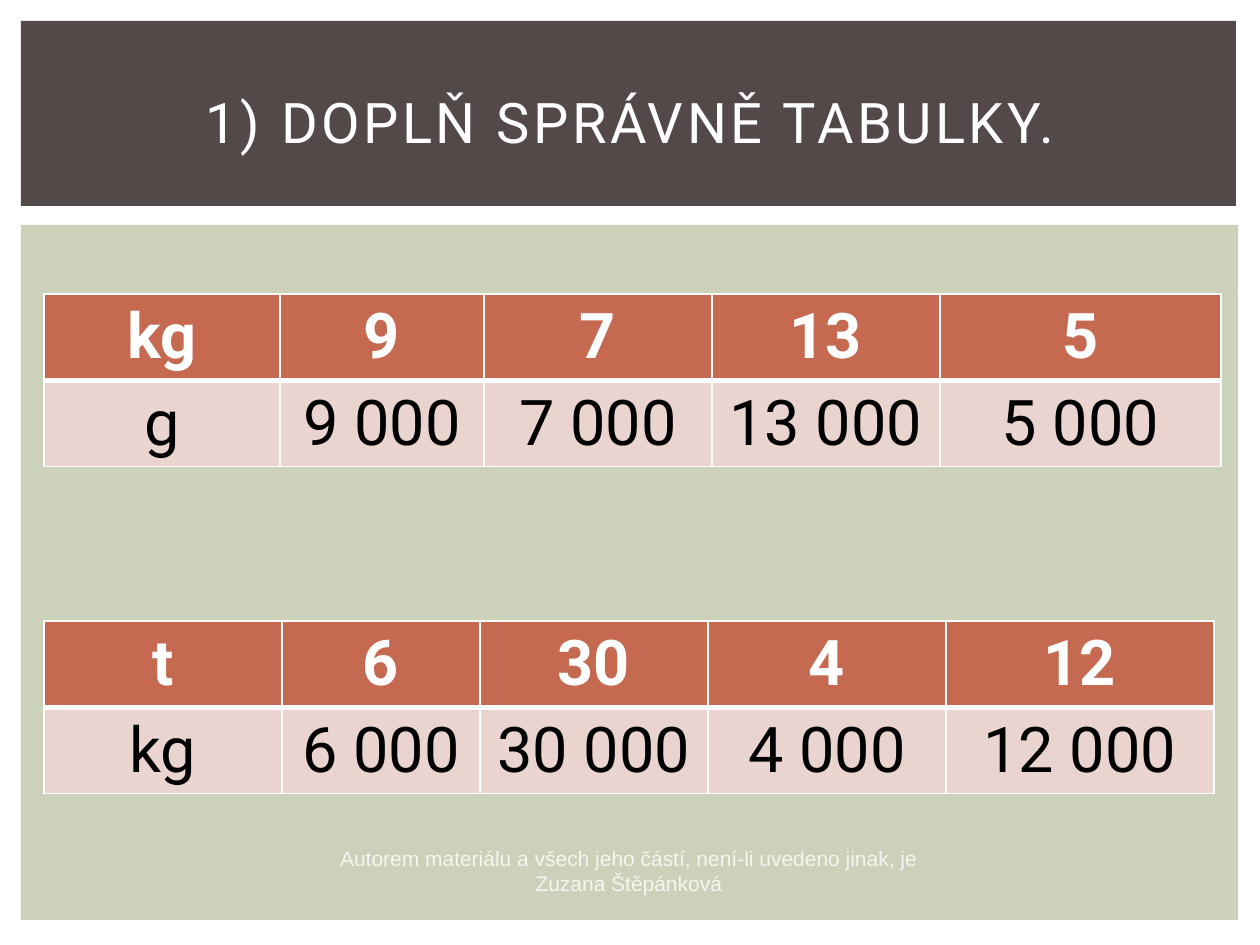
from dataclasses import dataclass

from lxml import etree
from pptx import Presentation
from pptx import util as u
from pptx.dml.color import RGBColor
from pptx.enum import shapes, text
from pptx.oxml.ns import qn

PX = u.Inches(1) // 126


@dataclass(frozen=True)
class Theme:
    font: str = "Roboto"
    footer_font: str = "Arial"
    white: str = "FFFFFF"
    black: str = "000000"
    band: str = "534949"
    panel: str = "CCD1B9"
    header: str = "C66951"
    body: str = "EAD4D0"
    footer: str = "F5F6F1"
    title_size: int = 32
    cell_size: int = 36
    footer_size: int = 12


T = Theme()


def px(*values):
    return [v * PX for v in values]


def write(tf, content, font, size, color, bold=False):
    p = tf.paragraphs[0]
    p.alignment = text.PP_ALIGN.CENTER
    r = p.add_run()
    r.text = content
    fmt = {"name": font, "size": u.Pt(size), "bold": bold}
    for name, value in fmt.items():
        setattr(r.font, name, value)
    r.font.color.rgb = RGBColor.from_string(color)
    return r


def add_panel(s, box, color):
    sp = s.shapes.add_shape(shapes.MSO_SHAPE.RECTANGLE, *px(*box))
    sp.shadow.inherit = False
    sp.fill.solid()
    sp.fill.fore_color.rgb = RGBColor.from_string(color)
    sp.line.fill.background()
    return sp


def set_title(s, content, box):
    sp = s.shapes.title
    for name, value in zip(("left", "top", "width", "height"), px(*box)):
        setattr(sp, name, value)
    tf = sp.text_frame
    fmt = {
        "word_wrap": True,
        "auto_size": text.MSO_AUTO_SIZE.NONE,
        "vertical_anchor": text.MSO_ANCHOR.MIDDLE,
    }
    for name, value in fmt.items():
        setattr(tf, name, value)
    r = write(tf, content, T.font, T.title_size, T.white)
    r.font.element.set("spc", "200") if hasattr(r.font, "element") else r._r.get_or_add_rPr().set("spc", "200")


def set_borders(cell, widths):
    tc_pr = cell._tc.get_or_add_tcPr()
    for side, width in widths.items():
        ln = etree.SubElement(tc_pr, qn(f"a:ln{side}"), w=str(u.Pt(width)))
        fill = etree.SubElement(ln, qn("a:solidFill"))
        etree.SubElement(fill, qn("a:srgbClr"), val=T.white)


def add_units_table(s, left, top, widths, row_height, rows):
    box = px(left, top, sum(widths), row_height * len(rows))
    tbl = s.shapes.add_table(len(rows), len(widths), *box).table
    for col, width in zip(tbl.columns, widths):
        col.width = width * PX
    for i, row in enumerate(rows):
        head = i == 0
        tbl.rows[i].height = row_height * PX
        fill, color = (T.header, T.white) if head else (T.body, T.black)
        borders = {"L": 1, "R": 1, "T": 1 if head else 3, "B": 3 if head else 1}
        for j, value in enumerate(row):
            cell = tbl.cell(i, j)
            set_borders(cell, borders)
            cell.fill.solid()
            cell.fill.fore_color.rgb = RGBColor.from_string(fill)
            write(cell.text_frame, value, T.font, T.cell_size, color, head)


def add_footer(s, content, box):
    tf = s.shapes.add_textbox(*px(*box)).text_frame
    tf.word_wrap = True
    write(tf, content, T.footer_font, T.footer_size, T.footer)


def main():
    prs = Presentation()
    prs.slide_width, prs.slide_height = px(1260, 945)
    s = prs.slides.add_slide(prs.slide_layouts[5])

    panel = add_panel(s, (21, 225, 1217, 695), T.panel)
    band = add_panel(s, (21, 21, 1215, 185), T.band)
    for sp in (panel, band):
        s.shapes.title.element.addprevious(sp.element)

    set_title(s, "1) DOPLŇ SPRÁVNĚ TABULKY.", (53, 49, 1155, 145))
    add_units_table(s, 44, 294, (236, 204, 228, 228, 281), 86, [
        ("kg", "9", "7", "13", "5"),
        ("g", "9 000", "7 000", "13 000", "5 000"),
    ])
    add_units_table(s, 44, 621, (238, 198, 228, 238, 268), 86, [
        ("t", "6", "30", "4", "12"),
        ("kg", "6 000", "30 000", "4 000", "12 000"),
    ])
    add_footer(
        s,
        "Autorem materiálu a všech jeho částí, není-li uvedeno jinak, je Zuzana Štěpánková",
        (314, 839, 630, 63),
    )
    prs.save("out.pptx")


if __name__ == "__main__":
    main()
